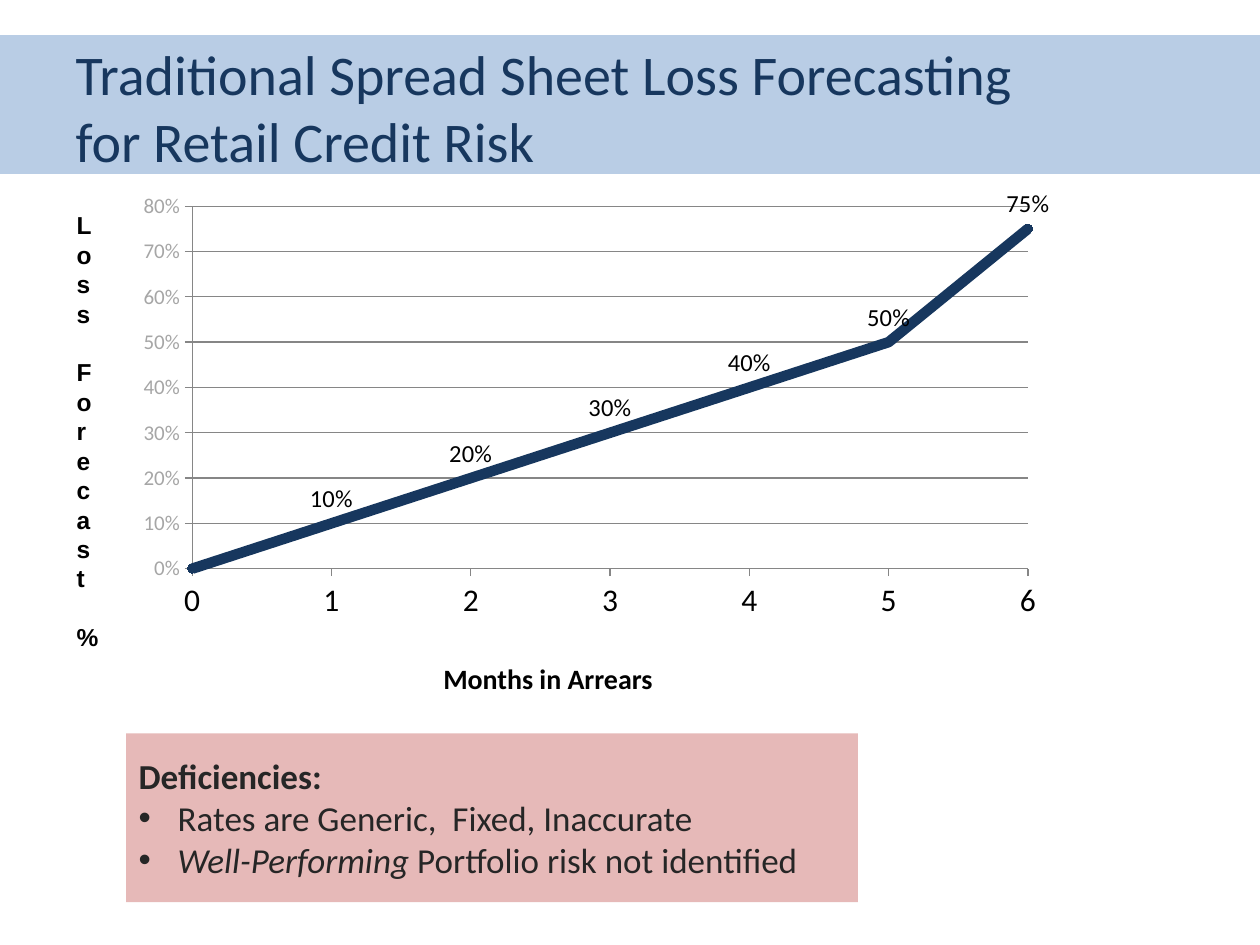
from lxml import etree
from pptx import Presentation
from pptx.chart.data import CategoryChartData
from pptx.dml.color import RGBColor
from pptx.enum.chart import XL_CHART_TYPE, XL_LABEL_POSITION, XL_MARKER_STYLE, XL_TICK_MARK
from pptx.enum.shapes import MSO_SHAPE
from pptx.enum.text import MSO_ANCHOR, PP_ALIGN
from pptx.oxml.ns import qn
from pptx.util import Inches, Pt

LINE_CHART = XL_CHART_TYPE.LINE_MARKERS
ABOVE = XL_LABEL_POSITION.ABOVE
CIRCLE = XL_MARKER_STYLE.CIRCLE
OUTSIDE = XL_TICK_MARK.OUTSIDE
RECTANGLE = MSO_SHAPE.RECTANGLE
MIDDLE = MSO_ANCHOR.MIDDLE
LEFT = PP_ALIGN.LEFT

COLORS = {
    "band": "B9CDE5", "navy": "17375E", "rose": "E6B9B8", "text": "262626",
    "black": "000000", "scale": "A6A6A6", "grid": "868686",
}
WIDTH, HEIGHT = Inches(10), Inches(7.5)


def color(name):
    return RGBColor.from_string(COLORS[name])


def format_font(font, color_name, **values):
    font.color.rgb = color(color_name)
    for attribute, value in {"name": "Calibri", **values}.items():
        setattr(font, attribute, value)


presentation = Presentation()
presentation.slide_width, presentation.slide_height = WIDTH, HEIGHT
slide = presentation.slides.add_slide(presentation.slide_layouts[1])
shapes = slide.shapes
title, deficiencies = slide.placeholders

# Title on a full-width band
band = shapes.add_shape(RECTANGLE, 0, Inches(0.28), WIDTH, Inches(1.1))
band.shadow.inherit = False
band.fill.solid()
band.fill.fore_color.rgb = color("band")
band.line.fill.background()
title.element.addprevious(band.element)

title.left, title.top, title.width, title.height = map(Inches, (0.5, 0.3, 9, 1.09))
title.text_frame.text = "Traditional Spread Sheet Loss Forecasting \vfor Retail Credit Risk"
title.text_frame.vertical_anchor = MIDDLE
paragraph = title.text_frame.paragraphs[0]
paragraph.alignment = LEFT
for run in paragraph.runs:
    format_font(run.font, "navy", size=Pt(32))

# Loss rate by months in arrears
chart_data = CategoryChartData(number_format="0%")
chart_data.categories = [str(month) for month in range(7)]
chart_data.add_series("Series 1", (0, 0.1, 0.2, 0.3, 0.4, 0.5, 0.75))
chart = shapes.add_chart(
    LINE_CHART, Inches(1.01), Inches(1.47), Inches(7.37), Inches(4.17), chart_data
).chart
chart.has_legend = chart.has_title = False
format_font(chart.font, "black", size=Pt(18))

rates = chart.plots[0].series[0]
rates.smooth = False
rates.format.line.color.rgb = color("navy")
rates.format.line.width = Pt(6)
rates.marker.style, rates.marker.size = CIRCLE, 5
rates.marker.format.fill.solid()
rates.marker.format.fill.fore_color.rgb = color("navy")
rates.marker.format.line.color.rgb = color("navy")

labels = rates.data_labels
labels.show_value = True
labels.position = ABOVE
labels.number_format = "0%;;"  # zero stays unlabelled
labels.number_format_is_linked = False
format_font(labels.font, "black", size=Pt(14))

months, scale = chart.category_axis, chart.value_axis
for axis in (months, scale):
    axis.major_tick_mark = OUTSIDE
    axis.format.line.color.rgb = color("grid")
scale.minimum_scale, scale.maximum_scale, scale.major_unit = 0, 0.8, 0.1
scale.has_major_gridlines = True
scale.major_gridlines.format.line.color.rgb = color("grid")
scale.tick_labels.number_format = "0%"
scale.tick_labels.number_format_is_linked = False
format_font(scale.tick_labels.font, "scale", size=Pt(12))
format_font(months.tick_labels.font, "black", size=Pt(18))

# The line starts on the value axis, in a fixed plot area
plot_area = chart.element.find(".//" + qn("c:plotArea"))
crossing = etree.Element(qn("c:crossBetween"), val="midCat")
plot_area.find(".//" + qn("c:majorUnit")).addprevious(crossing)
for old_layout in plot_area.findall(qn("c:layout")):
    plot_area.remove(old_layout)
layout = etree.Element(qn("c:layout"))
plot_area.insert(0, layout)
manual = etree.SubElement(layout, qn("c:manualLayout"))
for tag, value in {
    "layoutTarget": "inner", "xMode": "edge", "yMode": "edge",
    "x": "0.07", "y": "0.04", "w": "0.9", "h": "0.69",
}.items():
    etree.SubElement(manual, qn("c:" + tag)).set("val", value)

# Deficiencies list
deficiencies.left, deficiencies.top, deficiencies.width, deficiencies.height = map(
    Inches, (1, 5.82, 5.81, 1.34))
deficiencies.fill.solid()
deficiencies.fill.fore_color.rgb = color("rose")
frame = deficiencies.text_frame
frame.vertical_anchor = MIDDLE
LINES = [
    [("Deficiencies:", {"bold": True})],
    [("Rates are Generic,  Fixed, Inaccurate", {})],
    [("Well-Performing", {"italic": True}), (" Portfolio risk not identified", {})],
]
for index, line in enumerate(LINES):
    paragraph = frame.add_paragraph() if index else frame.paragraphs[0]
    paragraph.space_before = Pt(0)
    for text, style in line:
        run = paragraph.add_run()
        run.text = text
        format_font(run.font, "text", size=Pt(20), **style)
    properties = paragraph._p.get_or_add_pPr()
    indent = Inches(0.31) if index else 0
    properties.set("marL", str(indent))
    properties.set("indent", str(-indent))
    if index:
        etree.SubElement(properties, qn("a:buFont")).set("typeface", "Arial")
        etree.SubElement(properties, qn("a:buChar")).set("char", "•")
    else:
        etree.SubElement(properties, qn("a:buNone"))

# Axis captions
CAPTIONS = [
    ("Months in Arrears", (3.42, 5.13, 3, 0.51), "horz", MIDDLE, {"size": Pt(16)}),
    ("Loss Forecast %", (0.51, 1.62, 0.46, 4.41), "wordArtVert", None,
     {"size": Pt(14), "name": "Arial"}),
]
for text, box, direction, anchor, style in CAPTIONS:
    frame = shapes.add_textbox(*map(Inches, box)).text_frame
    frame.word_wrap = True
    frame.vertical_anchor = anchor
    frame._txBody.bodyPr.set("vert", direction)
    run = frame.paragraphs[0].add_run()
    run.text = text
    format_font(run.font, "black", bold=True, **style)

presentation.save("out.pptx")
